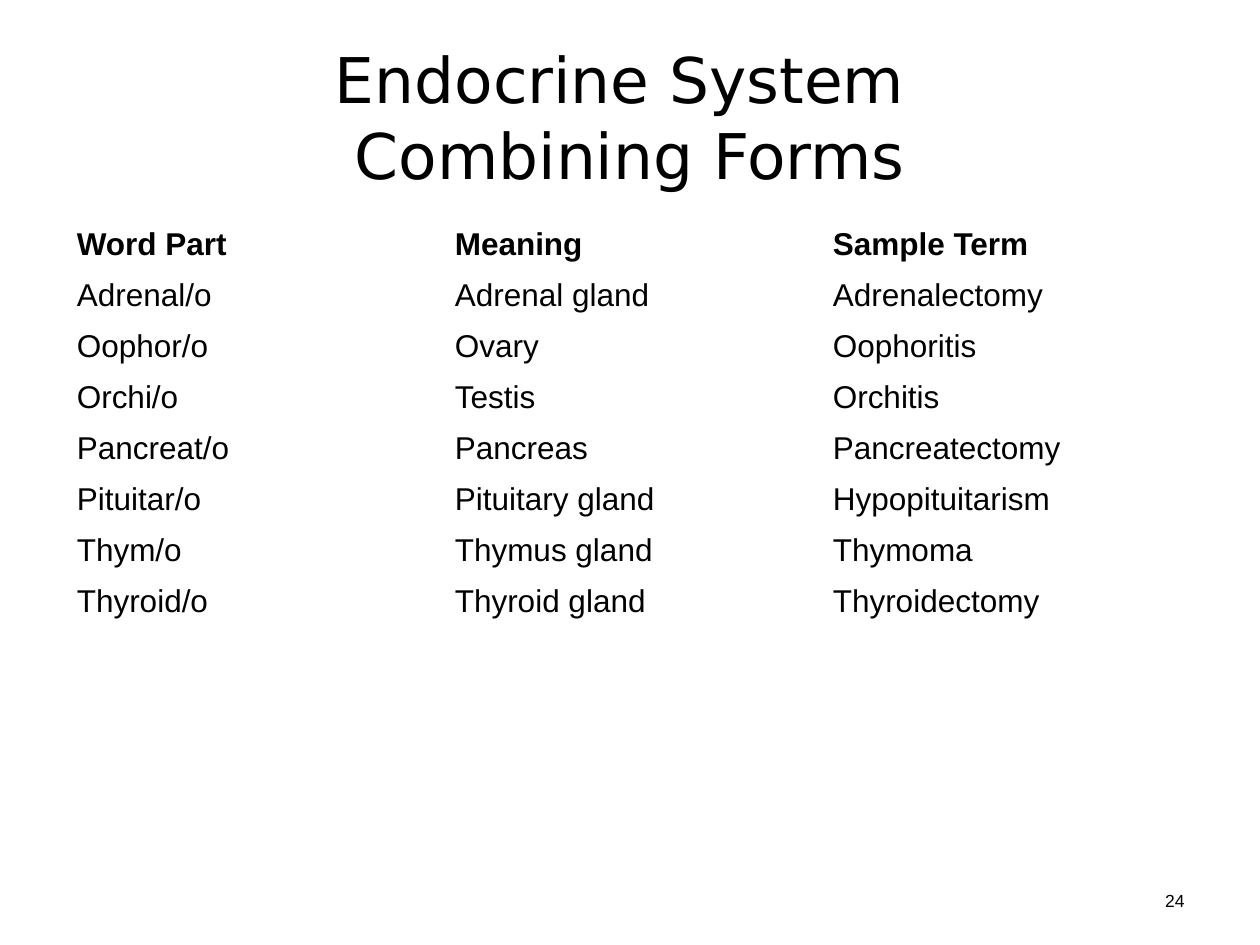
from pptx import Presentation
from pptx.dml.color import RGBColor
from pptx.enum.text import MSO_ANCHOR as Anchor, PP_ALIGN as Align
from pptx.util import Pt

BLACK = RGBColor(0, 0, 0)
BODY_FONT = "Arial"
TITLE_FONT = "DejaVu Sans"

TITLE_LINES = ["Endocrine System ", "Combining Forms"]
COMBINING_FORMS = [
    ("Word Part", "Meaning", "Sample Term"),
    ("Adrenal/o", "Adrenal gland", "Adrenalectomy"),
    ("Oophor/o", "Ovary", "Oophoritis"),
    ("Orchi/o", "Testis", "Orchitis"),
    ("Pancreat/o", "Pancreas", "Pancreatectomy"),
    ("Pituitar/o", "Pituitary gland", "Hypopituitarism"),
    ("Thym/o", "Thymus gland", "Thymoma"),
    ("Thyroid/o", "Thyroid gland", "Thyroidectomy"),
]


def add_span(para, text, size, font=BODY_FONT, bold=False):
    span = para.add_run()
    span.text = text
    span.font.size = Pt(size)
    span.font.name = font
    span.font.bold = bold
    span.font.color.rgb = BLACK


def add_text(page, box, lines, size, font, align):
    frame = page.shapes.add_textbox(*map(Pt, box)).text_frame
    frame.word_wrap = True
    frame.vertical_anchor = Anchor.MIDDLE
    para = frame.paragraphs[0]
    para.alignment = align
    for index, line in enumerate(lines):
        if index:
            para.add_line_break()
        add_span(para, line, size, font)


def add_title(page, box):
    add_text(page, box, TITLE_LINES, 36, TITLE_FONT, Align.CENTER)


def add_forms_table(page, box):
    rows, columns = len(COMBINING_FORMS), len(COMBINING_FORMS[0])
    table = page.shapes.add_table(rows, columns, *map(Pt, box)).table
    table.horz_banding = False
    for column in table.columns:
        column.width = Pt(box[2] / columns)
    for row_index, (row, entries) in enumerate(zip(table.rows, COMBINING_FORMS)):
        row.height = Pt(box[3] / rows)
        for cell, entry in zip(row.cells, entries):
            cell.fill.background()
            cell.margin_left = cell.margin_right = Pt(7.92)
            cell.margin_top = cell.margin_bottom = Pt(3.6)
            add_span(cell.text_frame.paragraphs[0], entry, 18, bold=row_index == 0)


def add_page_number(page, box):
    add_text(page, box, ["24"], 10, BODY_FONT, Align.RIGHT)


def main():
    deck = Presentation()
    deck.slide_width, deck.slide_height = Pt(720), Pt(540)
    page = deck.slides.add_slide(deck.slide_layouts[6])
    add_title(page, (36, 21.6, 648, 90))
    add_forms_table(page, (36, 126, 648, 233.28))
    add_page_number(page, (643.68, 493.2, 40.32, 43.2))
    deck.save("out.pptx")


if __name__ == "__main__":
    main()
